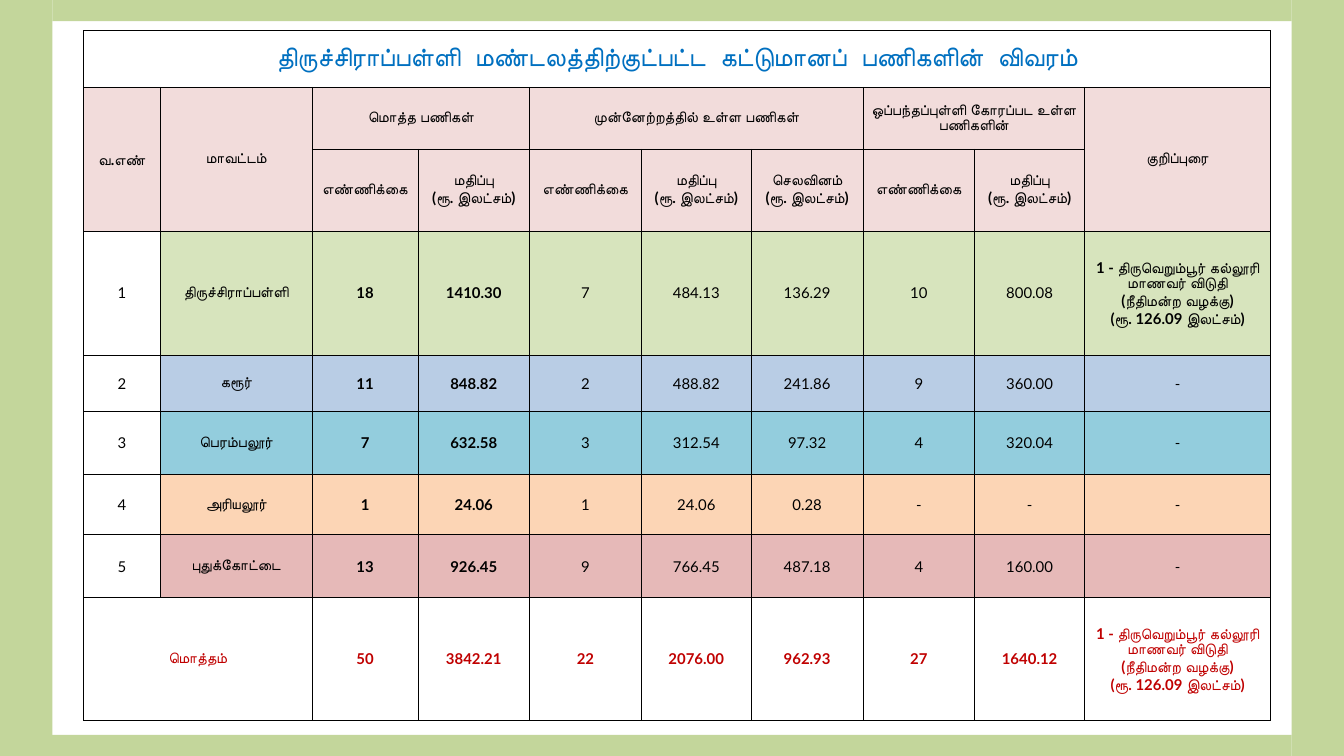
from lxml.etree import SubElement
from pptx import Presentation
from pptx.dml.color import RGBColor
from pptx.enum.shapes import MSO_SHAPE
from pptx.enum.text import MSO_ANCHOR, PP_ALIGN
from pptx.oxml.ns import qn
from pptx.util import Cm, Pt

WIDTH, HEIGHT = 25.4, 14.29
COLS = [1.45, 2.87, 2, 2.11, 2.11, 2.08, 2.11, 2.11, 2.08, 3.51]
ROWS = [1.07, 1.17, 1.55, 2.34, 1.07, 1.19, 1.14, 1.19, 2.31]
BLACK, BLUE, RED = "000000", "0070C0", "C00000"
PINK, GREEN = "F2DCDB", "C3D69B"
TINTS = ["D7E4BD", "B9CDE5", "93CDDD", "FCD5B5", "E6B9B8"]

TITLE = "திருச்சிராப்பள்ளி  மண்டலத்திற்குட்பட்ட  கட்டுமானப்  பணிகளின்  விவரம்"
COUNT = "எண்ணிக்கை"
VALUE = "மதிப்பு\n(ரூ. இலட்சம்)"
SPENT = "செலவினம்\n(ரூ. இலட்சம்)"
NOTE = "1 - திருவெறும்பூர் கல்லூரி மாணவர் விடுதி\n(நீதிமன்ற வழக்கு)\n(ரூ. 126.09 இலட்சம்)"

# row, column, rows spanned, columns spanned, text
HEADS = [
    (1, 0, 2, 1, "வ.எண்"),
    (1, 1, 2, 1, "மாவட்டம்"),
    (1, 2, 1, 2, "மொத்த பணிகள்"),
    (1, 4, 1, 3, "முன்னேற்றத்தில் உள்ள பணிகள்"),
    (1, 7, 1, 2, "ஒப்பந்தப்புள்ளி கோரப்பட உள்ள பணிகளின்"),
    (1, 9, 2, 1, "குறிப்புரை"),
]
UNITS = [COUNT, VALUE, COUNT, VALUE, SPENT, COUNT, VALUE]
WORKS = [
    ["1", "திருச்சிராப்பள்ளி", "18", "1410.30", "7", "484.13", "136.29", "10", "800.08", NOTE],
    ["2", "கரூர்", "11", "848.82", "2", "488.82", "241.86", "9", "360.00", "-"],
    ["3", "பெரம்பலூர்", "7", "632.58", "3", "312.54", "97.32", "4", "320.04", "-"],
    ["4", "அரியலூர்", "1", "24.06", "1", "24.06", "0.28", "-", "-", "-"],
    ["5", "புதுக்கோட்டை", "13", "926.45", "9", "766.45", "487.18", "4", "160.00", "-"],
]
TOTALS = ["50", "3842.21", "22", "2076.00", "962.93", "27", "1640.12", NOTE]


def paint(fill, color):
    fill.solid()
    fill.fore_color.rgb = RGBColor.from_string(color)


class Page:
    font = "Lato"

    def __init__(self, slide):
        self.slide = slide

    def band(self, left, top, width, height):
        shape = self.slide.shapes.add_shape(
            MSO_SHAPE.RECTANGLE, Cm(left), Cm(top), Cm(width), Cm(height))
        shape.shadow.inherit = False
        paint(shape.fill, GREEN)
        shape.line.fill.background()

    def grid(self, left, top, cols, rows):
        """Add an empty table with thin black rules."""
        table = self.slide.shapes.add_table(
            len(rows), len(cols), Cm(left), Cm(top),
            Cm(sum(cols)), Cm(sum(rows))).table
        table.first_row = table.horz_banding = False
        for col, width in zip(table.columns, cols):
            col.width = Cm(width)
        for row, height in zip(table.rows, rows):
            row.height = Cm(height)
        for cell in table.iter_cells():
            self.rule(cell)
            cell.fill.background()
            cell.margin_left = cell.margin_right = 0
            cell.margin_top = cell.margin_bottom = 0
            cell.vertical_anchor = MSO_ANCHOR.MIDDLE
        return table

    def rule(self, cell):
        props = cell._tc.get_or_add_tcPr()
        for side in "LRTB":
            line = SubElement(props, qn(f"a:ln{side}"), w=str(Pt(0.5)))
            fill = SubElement(line, qn("a:solidFill"))
            SubElement(fill, qn("a:srgbClr"), val=BLACK)

    def label(self, cell, text, color=BLACK, bold=True, size=8, fill=None):
        if fill:
            paint(cell.fill, fill)
        para = cell.text_frame.paragraphs[0]
        para.text = text
        para.alignment = PP_ALIGN.CENTER
        font = para.font
        font.name, font.size, font.bold = self.font, Pt(size), bold
        font.color.rgb = RGBColor.from_string(color)

    def span(self, table, row, col, down, over):
        cell = table.cell(row, col)
        cell.merge(table.cell(row + down - 1, col + over - 1))
        return cell


def main():
    deck = Presentation()
    deck.slide_width, deck.slide_height = Cm(WIDTH), Cm(HEIGHT)
    page = Page(deck.slides.add_slide(deck.slide_layouts[6]))

    table = page.grid(1.58, 0.58, COLS, ROWS)
    page.label(page.span(table, 0, 0, 1, len(COLS)), TITLE, BLUE, size=14)
    for row, col, down, over, text in HEADS:
        page.label(page.span(table, row, col, down, over), text, fill=PINK)
    for col, text in enumerate(UNITS, 2):
        page.label(table.cell(2, col), text, fill=PINK)

    for row, (work, tint) in enumerate(zip(WORKS, TINTS), 3):
        for col, text in enumerate(work):
            bold = col in (1, 2, 3) or text == NOTE
            page.label(table.cell(row, col), text, bold=bold,
                       fill=tint if col else None)

    last = len(ROWS) - 1
    page.label(page.span(table, last, 0, 1, 2), "மொத்தம்", RED)
    for col, text in enumerate(TOTALS, 2):
        page.label(table.cell(last, col), text, RED)

    side, edge = 0.99, 0.4
    page.band(0, 0, side, HEIGHT)
    page.band(WIDTH - side, 0, side, HEIGHT)
    page.band(side, 0, WIDTH - 2 * side, edge)
    page.band(0.79, HEIGHT - edge, WIDTH - side - 0.79, edge)
    deck.save("out.pptx")


if __name__ == "__main__":
    main()
